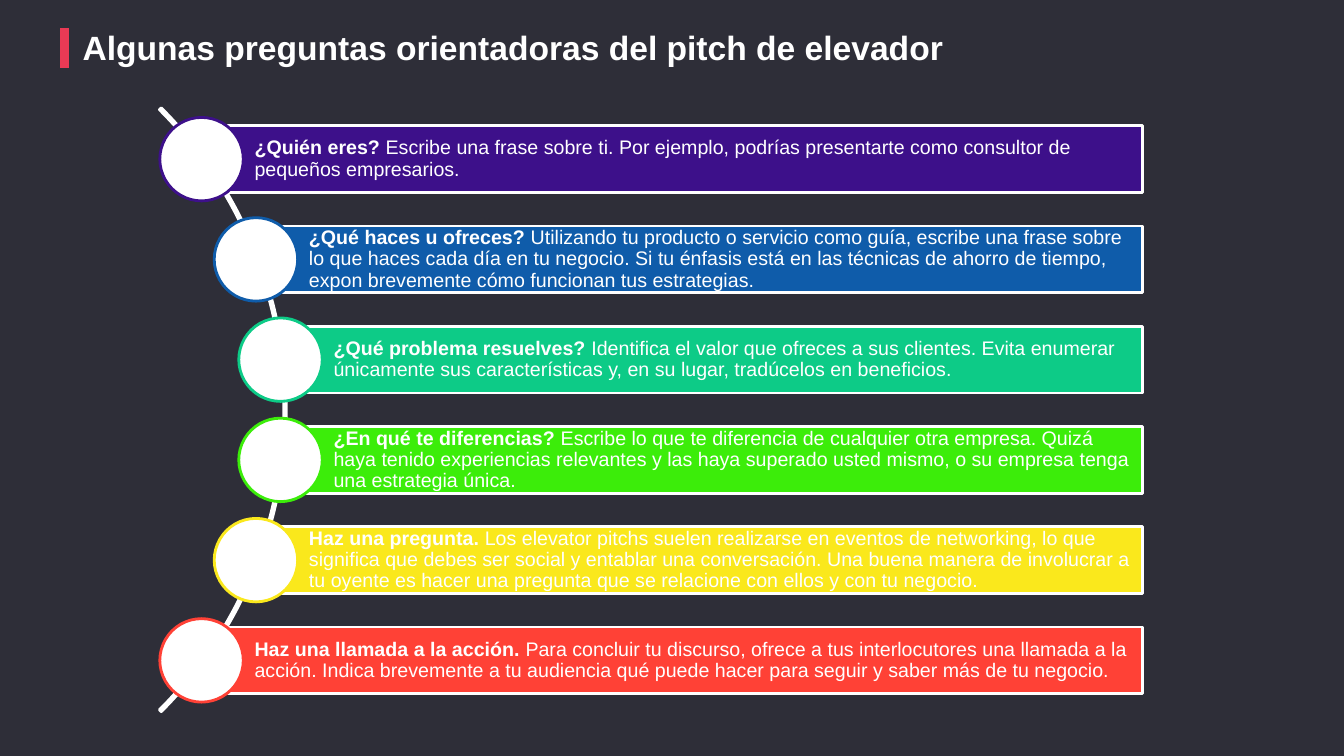
from dataclasses import dataclass
from math import sqrt
from typing import NamedTuple

from lxml.etree import SubElement
from pptx import Presentation
from pptx.dml.color import RGBColor
from pptx.enum.shapes import MSO_CONNECTOR as Connector, MSO_SHAPE as Shape
from pptx.enum.text import MSO_ANCHOR as Anchor, MSO_AUTO_SIZE as AutoSize, PP_ALIGN as Align
from pptx.oxml.ns import qn
from pptx.util import Pt


@dataclass(frozen=True)
class Theme:
    """Colours and type of the slide."""
    background: str = "2E2E38"
    accent: str = "EA3A55"
    light: str = "FFFFFF"
    bars: tuple = ("3D108A", "0F5CAA", "0DCB87", "3CED0A", "FAE81C", "FF4136")
    font: str = "Arial"
    title_size: float = 24
    body_size: float = 14
    outline: float = 2


class Box(NamedTuple):
    """A region in points."""
    left: float
    top: float
    width: float
    height: float


THEME = Theme()
TITLE = "Algunas preguntas orientadoras del pitch de elevador"
QUESTIONS = [
    ("¿Quién eres? ",
     "Escribe una frase sobre ti. Por ejemplo, podrías presentarte como consultor de "
     "pequeños empresarios."),
    ("¿Qué haces u ofreces? ",
     "Utilizando tu producto o servicio como guía, escribe una frase sobre lo que haces "
     "cada día en tu negocio. Si tu énfasis está en las técnicas de ahorro de tiempo, "
     "expon brevemente cómo funcionan tus estrategias."),
    ("¿Qué problema resuelves? ",
     "Identifica el valor que ofreces a sus clientes. Evita enumerar únicamente sus "
     "características y, en su lugar, tradúcelos en beneficios."),
    ("¿En qué te diferencias? ",
     "Escribe lo que te diferencia de cualquier otra empresa. Quizá haya tenido "
     "experiencias relevantes y las haya superado usted mismo, o su empresa tenga una "
     "estrategia única."),
    ("Haz una pregunta. ",
     "Los elevator pitchs suelen realizarse en eventos de networking, lo que significa "
     "que debes ser social y entablar una conversación. Una buena manera de involucrar a "
     "tu oyente es hacer una pregunta que se relacione con ellos y con tu negocio."),
    ("Haz una llamada a la acción. ",
     "Para concluir tu discurso, ofrece a tus interlocutores una llamada a la acción. "
     "Indica brevemente a tu audiencia qué puede hacer para seguir y saber más de tu "
     "negocio."),
]


def set_margins(frame, left, top, right, bottom):
    """Set the insets of a text frame in points."""
    frame.margin_left, frame.margin_top = Pt(left), Pt(top)
    frame.margin_right, frame.margin_bottom = Pt(right), Pt(bottom)


def add_span(para, text, size, bold):
    """Append one run of light text."""
    span = para.add_run()
    span.text = text
    span.font.name = THEME.font
    span.font.size = Pt(size)
    span.font.bold = bold
    span.font.color.rgb = RGBColor.from_string(THEME.light)


def add_figure(page, kind, box, fill, line):
    """Add a filled and outlined preset shape."""
    shape = page.shapes.add_shape(kind, *map(Pt, box))
    shape.shadow.inherit = False
    shape.fill.solid()
    shape.fill.fore_color.rgb = RGBColor.from_string(fill)
    shape.line.color.rgb = RGBColor.from_string(line)
    shape.line.width = Pt(THEME.outline)
    return shape


def add_title(page, box):
    """Place the accent mark and the heading to its right."""
    mark = page.shapes.add_connector(
        Connector.STRAIGHT, Pt(box.left), Pt(box.top), Pt(box.left), Pt(box.top + box.height))
    mark.line.color.rgb = RGBColor.from_string(THEME.accent)
    mark.line.width = Pt(6)
    SubElement(mark._element.spPr, qn("a:effectLst"))

    indent = 13
    heading = page.shapes.add_textbox(
        Pt(box.left + indent), Pt(box.top + 0.7), Pt(box.width - indent), Pt(box.height - 0.7))
    frame = heading.text_frame
    frame.word_wrap = True
    frame.auto_size = AutoSize.SHAPE_TO_FIT_TEXT
    set_margins(frame, 0, 3, 0, 0)
    para = frame.paragraphs[0]
    para.line_spacing = 0.85
    para.space_after = Pt(6)
    add_span(para, TITLE, THEME.title_size, True)


def add_question(page, box, colour, question, answer):
    """Place one bar with its text and the circle centred on its left edge."""
    bar = add_figure(page, Shape.RECTANGLE, box, colour, THEME.light)
    frame = bar.text_frame
    frame.word_wrap = True
    frame.vertical_anchor = Anchor.MIDDLE
    set_margins(frame, 37.9, 2.8, 2.8, 2.8)
    para = frame.paragraphs[0]
    para.alignment = Align.LEFT
    para.line_spacing = 0.9
    add_span(para, question, THEME.body_size, True)
    add_span(para, answer, THEME.body_size, False)

    size = box.height * 1.25
    circle = Box(box.left - size / 2, box.top + (box.height - size) / 2, size, size)
    add_figure(page, Shape.OVAL, circle, THEME.light, colour)


def add_question_arc(page, box):
    """Place the quarter arc and the questions that follow its curve."""
    radius = box.height / sqrt(2)
    centre_x = box.left - box.height / 2
    centre_y = box.top + box.height / 2
    arc = add_figure(
        page, Shape.BLOCK_ARC,
        Box(centre_x - radius, centre_y - radius, 2 * radius, 2 * radius),
        THEME.light, THEME.light)
    for index, value in enumerate((189, 27, 0.003)):
        arc.adjustments[index] = value

    pitch, bar_height = 71.6, 47.7
    right = box.left + box.width
    for row, (colour, question) in enumerate(zip(THEME.bars, QUESTIONS)):
        offset = (row - (len(QUESTIONS) - 1) / 2) * pitch
        left = centre_x + sqrt((radius - 2) ** 2 - offset ** 2)
        bar = Box(left, centre_y + offset - bar_height / 2, right - left, bar_height)
        add_question(page, bar, colour, *question)


def main():
    """Build and save the deck."""
    deck = Presentation()
    deck.slide_width, deck.slide_height = Pt(960), Pt(540)
    page = deck.slides.add_slide(deck.slide_layouts[6])
    page.background.fill.solid()
    page.background.fill.fore_color.rgb = RGBColor.from_string(THEME.background)
    add_title(page, Box(46, 20.2, 744.5, 28.1))
    add_question_arc(page, Box(115.2, 77.1, 701.1, 431.2))
    deck.save("out.pptx")


if __name__ == "__main__":
    main()
